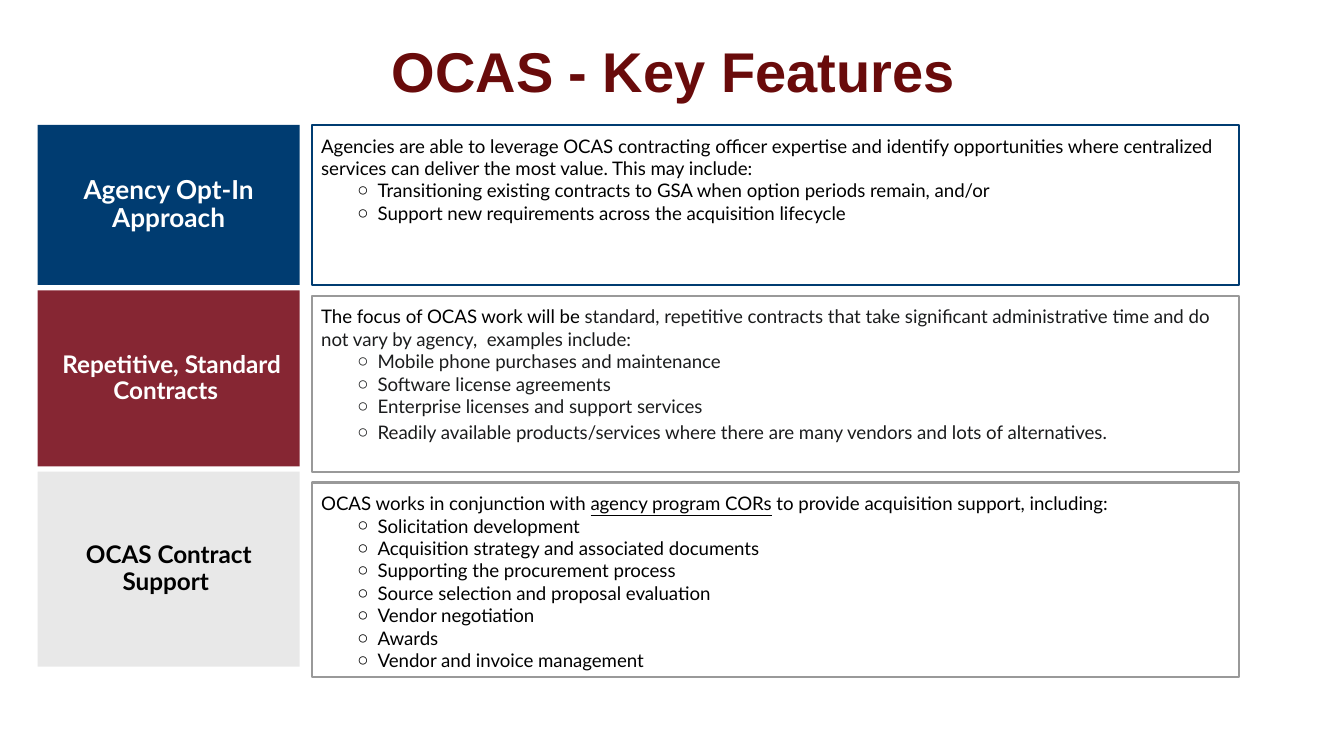
from lxml.etree import SubElement
from pptx import Presentation
from pptx.dml.color import RGBColor
from pptx.enum.shapes import MSO_SHAPE as Shape
from pptx.enum.text import MSO_ANCHOR as Anchor, PP_ALIGN as Align
from pptx.oxml.ns import qn
from pptx.util import Inches, Pt

TITLE = "OCAS - Key Features"
BLACK, INK, WHITE = "000000", "1B1C1D", "FFFFFF"
NAVY, MAROON, PALE, GREY = "003C71", "862633", "E8E8E8", "999999"

FEATURES = [
    {
        "label": "Agency Opt-In Approach", "size": 14, "height": 1.19, "right_inset": 0.2,
        "fill": NAVY, "label_color": WHITE, "border": NAVY, "bullet_color": BLACK,
        "intro": [("Agencies are able to leverage OCAS contracting officer expertise and identify "
                   "opportunities where centralized services can deliver the most value. "
                   "This may include:", BLACK, False)],
        "bullets": [
            ("Transitioning existing contracts to GSA when option periods remain, and/or", 1),
            ("Support new requirements across the acquisition lifecycle", 1),
        ],
    },
    {
        "label": " Repetitive, Standard Contracts ", "size": 13, "height": 1.31,
        "right_inset": 0.07,
        "fill": MAROON, "label_color": WHITE, "border": GREY, "bullet_color": INK,
        "intro": [("The focus of OCAS work will be ", BLACK, False),
                  ("standard, repetitive contracts that take significant administrative time "
                   "and do not vary by agency,  examples include:", INK, False)],
        "bullets": [
            ("Mobile phone purchases and maintenance", 1),
            ("Software license agreements", 1),
            ("Enterprise licenses and support services", 1),
            ("Readily available products/services where there are many vendors "
             "and lots of alternatives.", 1.15),
        ],
    },
    {
        "label": "OCAS Contract Support ", "size": 13, "height": 1.45, "right_inset": 0.07,
        "fill": PALE, "label_color": BLACK, "border": GREY, "bullet_color": BLACK,
        "intro": [("OCAS works in conjunction with ", BLACK, False),
                  ("agency program CORs", BLACK, True),
                  (" to provide acquisition support, including:", BLACK, False)],
        "bullets": [
            ("Solicitation development", 1),
            ("Acquisition strategy and associated documents", 1),
            ("Supporting the procurement process", 1),
            ("Source selection and proposal evaluation", 1),
            ("Vendor negotiation", 1),
            ("Awards", 1),
            ("Vendor and invoice management", 1),
        ],
    },
]

TOP = 0.93
LABEL_LEFT, LABEL_WIDTH, LABEL_GAP = 0.28, 1.95, 0.04
DETAIL_LEFT, DETAIL_WIDTH, DETAIL_GAP = 2.32, 6.9, 0.08


def rgb(value):
    return RGBColor.from_string(value)


def style(run, size, color, bold=False, face="Lato"):
    run.font.size = Pt(size)
    run.font.name = face
    run.font.bold = bold
    run.font.color.rgb = rgb(color)


def set_insets(frame, inset):
    frame.margin_left = frame.margin_right = Inches(inset)
    frame.margin_top = frame.margin_bottom = Inches(inset)
    frame.word_wrap = True


def add_box(slide, left, top, width, height, fill, border=None):
    box = slide.shapes.add_shape(
        Shape.RECTANGLE, Inches(left), Inches(top), Inches(width), Inches(height))
    box.shadow.inherit = False
    box.fill.solid()
    box.fill.fore_color.rgb = rgb(fill)
    if border:
        box.line.color.rgb = rgb(border)
        box.line.width = Pt(1.13)
    else:
        box.line.fill.background()
    set_insets(box.text_frame, 0.07)
    return box.text_frame


def add_label(slide, feature, top):
    frame = add_box(slide, LABEL_LEFT, top, LABEL_WIDTH, feature["height"], feature["fill"])
    frame.vertical_anchor = Anchor.MIDDLE
    frame.text = feature["label"]
    label = frame.paragraphs[0]
    label.alignment = Align.CENTER
    label.line_spacing = 0.9
    style(label.runs[0], feature["size"], feature["label_color"], bold=True)


def add_bullet(frame, text, spacing, color):
    bullet = frame.add_paragraph()
    bullet.text = text
    bullet.level = 1
    bullet.alignment = Align.LEFT
    bullet.line_spacing = spacing
    properties = bullet._p.get_or_add_pPr()
    properties.set("marL", str(Inches(0.42)))
    properties.set("indent", str(Inches(-0.15)))
    SubElement(SubElement(properties, qn("a:buClr")), qn("a:srgbClr")).set("val", color)
    SubElement(properties, qn("a:buFont")).set("typeface", "Arial")
    SubElement(properties, qn("a:buChar")).set("char", "○")
    style(bullet.runs[0], 10, color)


def add_detail(slide, feature, top):
    frame = add_box(slide, DETAIL_LEFT, top, DETAIL_WIDTH, feature["height"],
                    WHITE, feature["border"])
    frame.margin_right = Inches(feature["right_inset"])
    frame.vertical_anchor = Anchor.TOP
    intro = frame.paragraphs[0]
    intro.alignment = Align.LEFT
    for text, color, underlined in feature["intro"]:
        run = intro.add_run()
        run.text = text
        style(run, 10, color)
        run.font.underline = underlined
    for text, spacing in feature["bullets"]:
        add_bullet(frame, text, spacing, feature["bullet_color"])


def add_title(slide):
    title = slide.shapes.title
    title.left, title.top = Inches(0.51), Inches(0.17)
    title.width, title.height = Inches(9), Inches(0.75)
    frame = title.text_frame
    set_insets(frame, 0.1)
    frame.vertical_anchor = Anchor.TOP
    frame.text = TITLE
    heading = frame.paragraphs[0]
    heading.alignment = Align.CENTER
    style(heading.runs[0], 30, "690B0B", bold=True, face="Arial")


def main():
    deck = Presentation()
    deck.slide_width = Inches(10)
    deck.slide_height = deck.slide_width * 9 // 16
    slide = deck.slides.add_slide(deck.slide_layouts[5])
    add_title(slide)
    label_top = detail_top = TOP
    for feature in FEATURES:
        add_label(slide, feature, label_top)
        add_detail(slide, feature, detail_top)
        label_top += feature["height"] + LABEL_GAP
        detail_top += feature["height"] + DETAIL_GAP
    deck.save("out.pptx")


if __name__ == "__main__":
    main()
